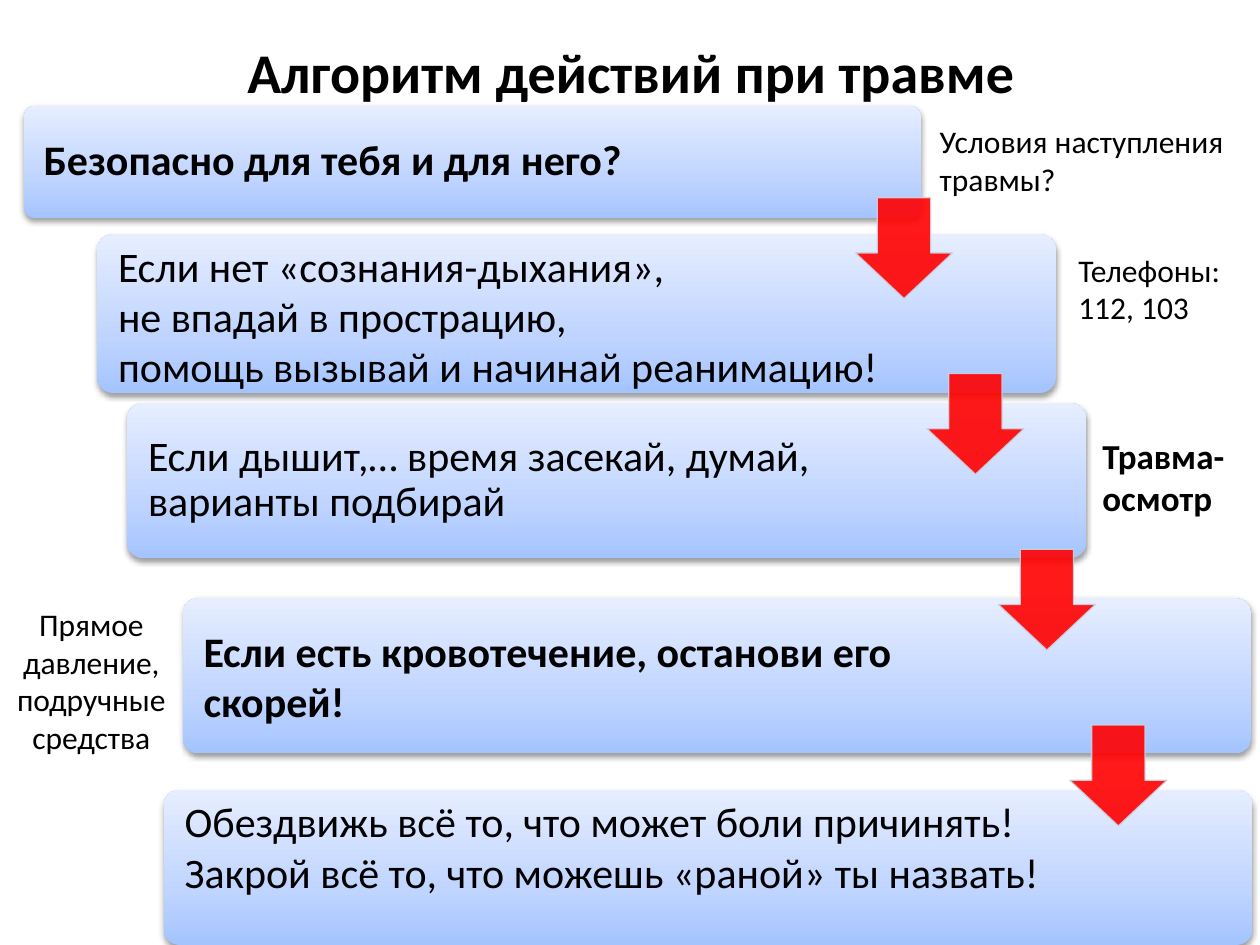
from copy import deepcopy
from dataclasses import dataclass

from lxml import etree
from pptx import Presentation
from pptx import util as u
from pptx.dml.color import RGBColor
from pptx.enum import shapes, text
from pptx.oxml.ns import qn


@dataclass(frozen=True)
class Theme:
    font: str = "Calibri"
    ink: str = "000000"
    red: str = "FF0000"
    edge: str = "CBD3E3"
    fade: tuple = ((0, "A4C4FF"), (0.35, "BFD4FF"), (1, "E6EEFF"))
    head: int = 32
    body: int = 24
    mark: int = 20
    note: int = 18


T = Theme()
COLS, ROWS = 100, 75
SIZE = u.Inches(10), u.Inches(7.5)
MID, TOP = text.MSO_ANCHOR.MIDDLE, text.MSO_ANCHOR.TOP
LEFT, MIDST = text.PP_ALIGN.LEFT, text.PP_ALIGN.CENTER

# Steps: place in columns and rows, lines, bold, anchor, right inset, spacing
STEPS = [
    ((1.9, 8.4, 71.2, 8.9), ["Безопасно для тебя и для него?"],
     True, MID, 13.9, 0.9),
    ((7.7, 18.6, 76.1, 12.6),
     ["Если нет «сознания-дыхания»,", "не впадай в прострацию,",
      "помощь вызывай и начинай реанимацию!"], False, TOP, 13.7, 1),
    ((10.1, 32, 76.1, 12.3),
     ["Если дышит,… время засекай, думай, варианты подбирай"],
     False, MID, 14.7, 0.9),
    ((14.5, 47.5, 84.8, 12.3),
     ["Если есть кровотечение, останови его скорей!"], True, MID, 16.3, 1),
    ((13, 62.7, 86.4, 12.3),
     ["Обездвижь всё то, что может боли причинять!",
      "Закрой всё то, что можешь «раной» ты назвать!"],
     False, TOP, 15.1, 1),
]

# Notes: place, lines, size, bold, alignment
NOTES = [
    ((86.5, 34, 11.8, 10.8), ["Травма-", "осмотр"], T.mark, True, LEFT),
    ((73.6, 9.2, 24.8, 7.1), ["Условия наступления", "травмы?"],
     T.note, False, LEFT),
    ((84.6, 19.4, 13.4, 10.1), ["Телефоны:", "112, 103"],
     T.note, False, LEFT),
    ((0, 47.5, 14.5, 13.1), ["Прямое", "давление,", "подручные", "средства"],
     T.note, False, MIDST),
]


def wide(cols):
    return int(SIZE[0] * cols / COLS)


def high(rows):
    return int(SIZE[1] * rows / ROWS)


def place(x, y, w, h):
    return wide(x), high(y), wide(w), high(h)


def rgb(code):
    return RGBColor.from_string(code)


def write(frame, lines, size, bold, align, gap=1):
    frame.text = "\n".join(lines)
    for para in frame.paragraphs:
        para.alignment = align
        para.line_spacing = gap
        for run in para.runs:
            run.font.name = T.font
            run.font.size = u.Pt(size)
            run.font.bold = bold
            run.font.color.rgb = rgb(T.ink)


def alpha(color, share):
    etree.SubElement(color, qn("a:alpha"), val=str(share * 1000))


def shade(shape):
    """Soft shadow just below the shape."""
    shape.shadow.inherit = False
    effects = shape._element.spPr.find(qn("a:effectLst"))
    outer = etree.SubElement(effects, qn("a:outerShdw"), blurRad="40000",
                             dist="20000", dir="5400000", rotWithShape="0")
    alpha(etree.SubElement(outer, qn("a:srgbClr"), val=T.ink), 38)


def blend(shape):
    """Three-stop gradient, darkest at the bottom."""
    fill = shape.fill
    fill.gradient()
    fill.gradient_angle = 90
    stops = shape._element.spPr.find(".//" + qn("a:gsLst"))
    stops.insert(1, deepcopy(stops[0]))
    for stop, (spot, code) in zip(fill.gradient_stops, T.fade):
        stop.position = spot
        stop.color.rgb = rgb(code)


def step(slide, spot, lines, bold, anchor, right, gap):
    box = slide.shapes.add_shape(shapes.MSO_SHAPE.ROUNDED_RECTANGLE,
                                 *place(*spot))
    box.adjustments[0] = 0.1
    blend(box)
    box.line.fill.background()
    shade(box)
    frame = box.text_frame
    frame.word_wrap = True
    frame.vertical_anchor = anchor
    frame.margin_left, frame.margin_right = wide(1.3), wide(right)
    frame.margin_top = frame.margin_bottom = high(1.3 if anchor == MID else 0.1)
    write(frame, lines, T.body, bold, LEFT, gap)


def arrow(slide, rank):
    spot = place(67.9 + 5.67 * rank, 15.7 + 13.95 * rank, 7.7, 8)
    shape = slide.shapes.add_shape(shapes.MSO_SHAPE.DOWN_ARROW, *spot)
    shape.adjustments[0], shape.adjustments[1] = 0.55, 0.47
    shape.shadow.inherit = False
    shape.fill.solid()
    shape.fill.fore_color.rgb = rgb(T.red)
    shape.line.color.rgb = rgb(T.edge)
    shape.line.width = u.Pt(0.75)
    for color in shape._element.spPr.iter(qn("a:srgbClr")):
        alpha(color, 90)


def note(slide, spot, lines, size, bold, align):
    frame = slide.shapes.add_textbox(*place(*spot)).text_frame
    frame.word_wrap = False
    frame.auto_size = text.MSO_AUTO_SIZE.SHAPE_TO_FIT_TEXT
    write(frame, lines, size, bold, align)


def title(slide, words):
    frame = slide.shapes.add_textbox(*place(5.1, 1.3, 90, 8.7)).text_frame
    frame.word_wrap = True
    frame.vertical_anchor = MID
    write(frame, [words], T.head, True, MIDST)


def main():
    deck = Presentation()
    deck.slide_width, deck.slide_height = SIZE
    slide = deck.slides.add_slide(deck.slide_layouts[6])

    title(slide, "Алгоритм действий при травме")
    for item in STEPS:
        step(slide, *item)
    # One arrow between each pair of steps
    for rank in range(len(STEPS) - 1):
        arrow(slide, rank)
    for item in NOTES:
        note(slide, *item)

    deck.save("out.pptx")


if __name__ == "__main__":
    main()
